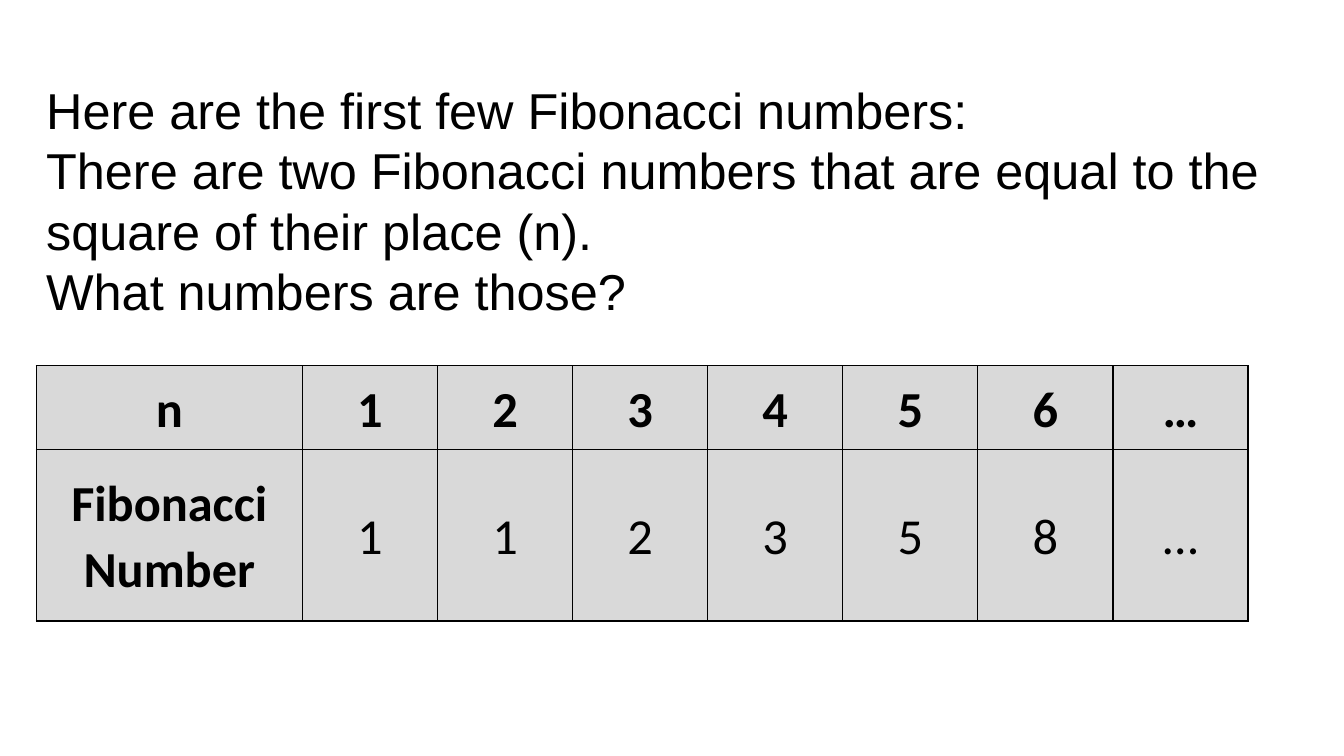
from lxml.etree import SubElement
from pptx import Presentation
from pptx.dml.color import RGBColor
from pptx.enum.text import MSO_ANCHOR, PP_ALIGN
from pptx.oxml.ns import qn
from pptx.util import Inches, Pt

QUESTION = [
    "Here are the first few Fibonacci numbers:",
    "There are two Fibonacci numbers that are equal to the square of their place (n).",
    "What numbers are those?",
]
FIBONACCI_TABLE = [
    ["n", "1", "2", "3", "4", "5", "6", "…"],
    ["Fibonacci Number", "1", "1", "2", "3", "5", "8", "…"],
]


def color(value):
    return RGBColor.from_string(value)


class SlideBuilder:
    ink = "000000"
    cell_fill = "D9D9D9"
    body_font = "Arial"
    table_font = "Calibri"
    size = 36
    border_width = 1

    def __init__(self, slide):
        self.s = slide

    def run(self, p, text, font, bold=False):
        r = p.add_run()
        r.text = text
        r.font.name = font
        r.font.size = Pt(self.size)
        r.font.bold = bold
        r.font.color.rgb = color(self.ink)

    def text(self, left, top, width, height, lines):
        sp = self.s.shapes.add_textbox(
            Inches(left), Inches(top), Inches(width), Inches(height))
        tf = sp.text_frame
        tf.word_wrap = True
        tf.vertical_anchor = MSO_ANCHOR.MIDDLE
        for i, line in enumerate(lines):
            p = tf.add_paragraph() if i else tf.paragraphs[0]
            self.run(p, line, self.body_font)

    def borders(self, cell):
        """Draw all four sides; they must precede the fill in the cell XML."""
        tc_pr = cell._tc.get_or_add_tcPr()
        for side in ("a:lnL", "a:lnR", "a:lnT", "a:lnB"):
            ln = SubElement(tc_pr, qn(side), w=str(Pt(self.border_width)))
            fill = SubElement(ln, qn("a:solidFill"))
            SubElement(fill, qn("a:srgbClr"), val=self.ink)

    def cell(self, cell, text, bold):
        self.borders(cell)
        cell.fill.solid()
        cell.fill.fore_color.rgb = color(self.cell_fill)
        cell.vertical_anchor = MSO_ANCHOR.MIDDLE
        cell.margin_left = cell.margin_right = Inches(0.07)
        cell.margin_top = cell.margin_bottom = 0
        p = cell.text_frame.paragraphs[0]
        p.alignment = PP_ALIGN.CENTER
        p.line_spacing = 1.07
        self.run(p, text, self.table_font, bold)

    def table(self, left, top, widths, heights, rows):
        """Add a table whose first row and first column are bold."""
        table = self.s.shapes.add_table(
            len(rows), len(widths), Inches(left), Inches(top),
            Inches(sum(widths)), Inches(sum(heights))).table
        for column, width in zip(table.columns, widths):
            column.width = Inches(width)
        for row, height in zip(table.rows, heights):
            row.height = Inches(height)
        for i, values in enumerate(rows):
            for j, value in enumerate(values):
                self.cell(table.cell(i, j), value, bold=i == 0 or j == 0)


def main():
    prs = Presentation()
    prs.slide_width = Inches(13.33)
    prs.slide_height = Inches(7.5)
    builder = SlideBuilder(prs.slides.add_slide(prs.slide_layouts[6]))
    builder.table(0.36, 3.63, [2.64] + [1.34] * 7, [0.83, 1.7], FIBONACCI_TABLE)
    builder.text(0.36, 0.72, 12.6, 2.52, QUESTION)
    prs.save("out.pptx")


if __name__ == "__main__":
    main()
